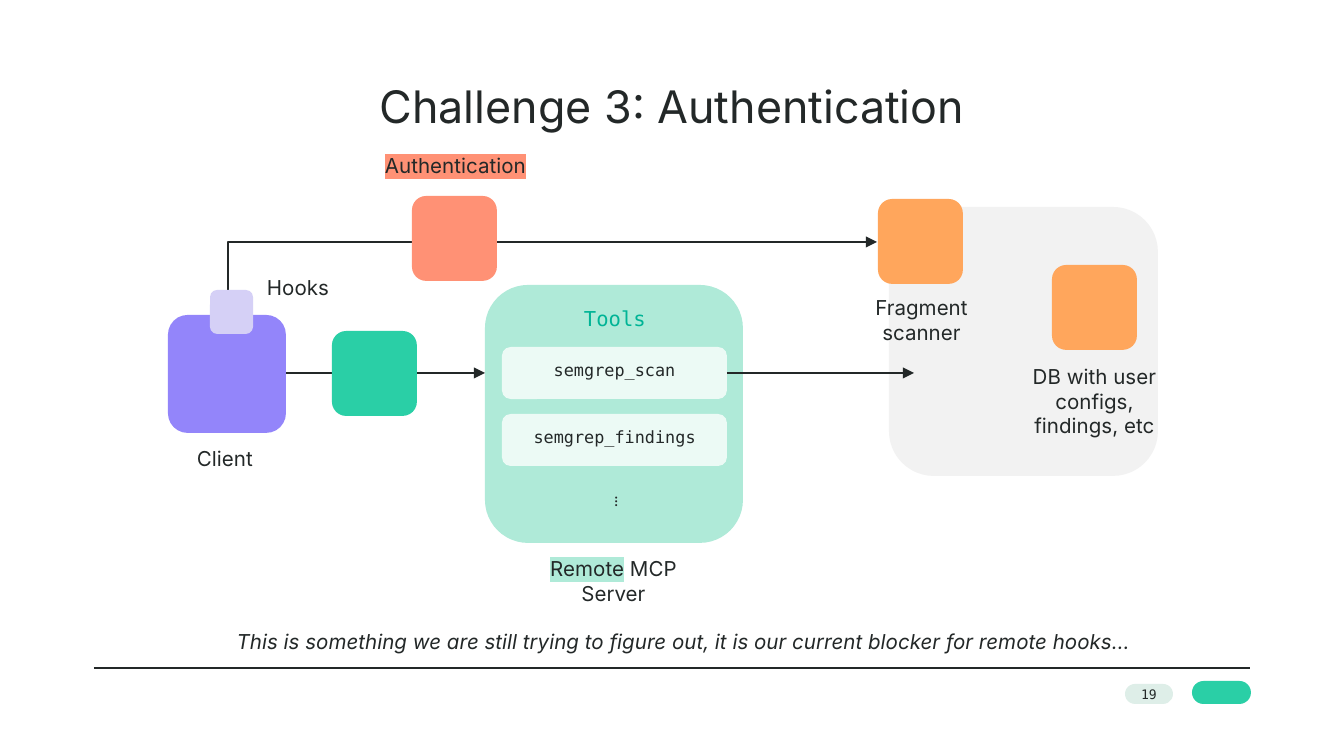
from lxml.etree import SubElement
from pptx import Presentation
from pptx.dml.color import RGBColor
from pptx.enum.shapes import MSO_CONNECTOR, MSO_SHAPE
from pptx.enum.text import MSO_ANCHOR, MSO_AUTO_SIZE, PP_ALIGN
from pptx.oxml.ns import qn
from pptx.util import Emu, Pt

INK = RGBColor(0x23, 0x28, 0x28)
GREY = RGBColor(0xF2, 0xF2, 0xF2)
BADGE = RGBColor(0xDE, 0xEE, 0xE8)
MINT = RGBColor(0xAF, 0xEA, 0xD8)
PALE_MINT = RGBColor(0xEC, 0xFA, 0xF5)
GREEN = RGBColor(0x2A, 0xCF, 0xA6)
TEAL = RGBColor(0x00, 0xB4, 0x96)
PURPLE = RGBColor(0x93, 0x85, 0xFA)
LILAC = RGBColor(0xD5, 0xD0, 0xF6)
ORANGE = RGBColor(0xFF, 0xA6, 0x5C)
CORAL = RGBColor(0xFF, 0x91, 0x75)

SANS, MONO = "Inter", "DejaVu Sans Mono"
EMU_PER_PX = 914400 / 134.4
NODE = 85  # side of a small service square
PAD = 13


def px(length):
    return Emu(round(length * EMU_PER_PX))


class Diagram:
    def __init__(self, slide):
        self.slide = slide
        self.shapes = slide.shapes

    def set_text(self, frame, text, size=11, face=SANS, color=INK, align=PP_ALIGN.CENTER,
                 pad=0, italic=False, anchor=MSO_ANCHOR.TOP):
        frame.margin_left = frame.margin_right = px(pad)
        frame.margin_top = frame.margin_bottom = px(pad)
        frame.word_wrap = True
        frame.vertical_anchor = anchor
        paragraph = frame.paragraphs[0]
        paragraph.alignment = align
        font = paragraph.font
        font.size, font.name, font.italic = Pt(size), face, italic
        font.color.rgb = color
        paragraph.add_run().text = text
        return paragraph

    def title(self, text, x, y, w, h):
        heading = self.shapes.title
        heading.left, heading.top, heading.width, heading.height = map(px, (x, y, w, h))
        heading.text_frame.auto_size = MSO_AUTO_SIZE.NONE
        self.set_text(heading.text_frame, text, size=24).line_spacing = 0.9

    def label(self, text, x, y, w, h, highlight=None, **style):
        """Add a text box; highlight is a (leading words, colour) pair."""
        caption = self.shapes.add_textbox(*map(px, (x, y, w, h)))
        caption.text_frame.auto_size = MSO_AUTO_SIZE.SHAPE_TO_FIT_TEXT
        paragraph = self.set_text(caption.text_frame, text, pad=PAD, **style)
        if highlight:
            words, color = highlight
            paragraph.runs[0].text = words
            marked = caption.element.find(".//" + qn("a:r"))
            marker = SubElement(marked.get_or_add_rPr(), qn("a:highlight"))
            SubElement(marker, qn("a:srgbClr"), val=str(color))
            if text != words:
                paragraph.add_run().text = text[len(words):]

    def box(self, x, y, w, h, fill, radius=0.167):
        block = self.shapes.add_shape(MSO_SHAPE.ROUNDED_RECTANGLE, *map(px, (x, y, w, h)))
        block.adjustments[0] = radius
        block.shadow.inherit = False
        block.fill.solid()
        block.fill.fore_color.rgb = fill
        block.line.fill.background()
        return block

    def node(self, x, y, fill):
        self.box(x, y, NODE, NODE, fill)

    def stroke(self, route, arrow):
        route.line.color.rgb = INK
        route.line.width = Pt(0.75)
        if arrow:
            outline = route.element.spPr.find(qn("a:ln"))
            SubElement(outline, qn("a:tailEnd"), type="triangle")

    def line(self, x1, x2, y, arrow=True):
        link = self.shapes.add_connector(MSO_CONNECTOR.STRAIGHT, *map(px, (x1, y, x2, y)))
        self.stroke(link, arrow)
        SubElement(link.element.spPr, qn("a:effectLst"))

    def bent_arrow(self, start, *points):
        builder = self.shapes.build_freeform(*start, scale=EMU_PER_PX)
        builder.add_line_segments(points, close=False)
        route = builder.convert_to_shape()
        route.shadow.inherit = False
        route.fill.background()
        self.stroke(route, True)


def main():
    deck = Presentation()
    deck.slide_width, deck.slide_height = px(1344), px(756)
    title_only = deck.slide_layouts[5]
    diagram = Diagram(deck.slides.add_slide(title_only))

    # Footer: plain emblem, rule and page number
    diagram.box(1192, 681, 59, 23, GREEN, radius=0.5)
    diagram.line(94, 1250, 668, arrow=False)
    page = diagram.box(1125, 684, 48, 20, BADGE, radius=0.5)
    diagram.set_text(page.text_frame, "19", size=7, face=MONO, anchor=MSO_ANCHOR.MIDDLE)

    diagram.title("Challenge 3: Authentication", 93, 85, 1158, 66)

    # Backend area
    diagram.box(889, 207, 269, 269, GREY)

    # Remote server and its tools
    diagram.box(485, 285, 258, 258, MINT)
    diagram.label("Remote MCP Server", 524, 543, 179, 77, highlight=("Remote", MINT))
    diagram.label("Tools", 556, 294, 118, 52, face=MONO, color=TEAL)
    for row, tool in enumerate(("semgrep_scan", "semgrep_findings")):
        top = 347 + 67 * row
        diagram.box(502, top, 225, 52, PALE_MINT)
        diagram.label(tool, 519, top + 3, 191, 47, size=9, face=MONO)
    diagram.label("⋮", 597, 474, 34, 52, face=MONO, align=PP_ALIGN.LEFT)

    # Client to server to backend
    diagram.line(285, 485, 373)
    diagram.line(727, 914, 373)
    diagram.box(168, 315, 118, 118, PURPLE)
    diagram.label("Client", 184, 434, 85, 52, align=PP_ALIGN.LEFT)
    diagram.node(332, 331, GREEN)

    # Backend services
    diagram.node(1052, 265, ORANGE)
    diagram.label("DB with user configs, findings, etc", 1005, 351, 179, 102)
    diagram.node(878, 199, ORANGE)
    diagram.label("Fragment scanner", 832, 282, 179, 77)

    # Hooks reach the scanner through authentication
    diagram.bent_arrow((228, 315), (228, 242), (877, 242))
    diagram.box(210, 290, 43, 44, LILAC)
    diagram.label("Hooks", 254, 263, 113, 52, align=PP_ALIGN.LEFT)
    diagram.node(412, 196, CORAL)
    diagram.label("Authentication", 366, 141, 179, 52, highlight=("Authentication", CORAL))

    # Closing remark
    diagram.label("This is something we are still trying to figure out, "
                  "it is our current blocker for remote hooks…",
                  117, 617, 1134, 52, italic=True)

    deck.save("out.pptx")


if __name__ == "__main__":
    main()
